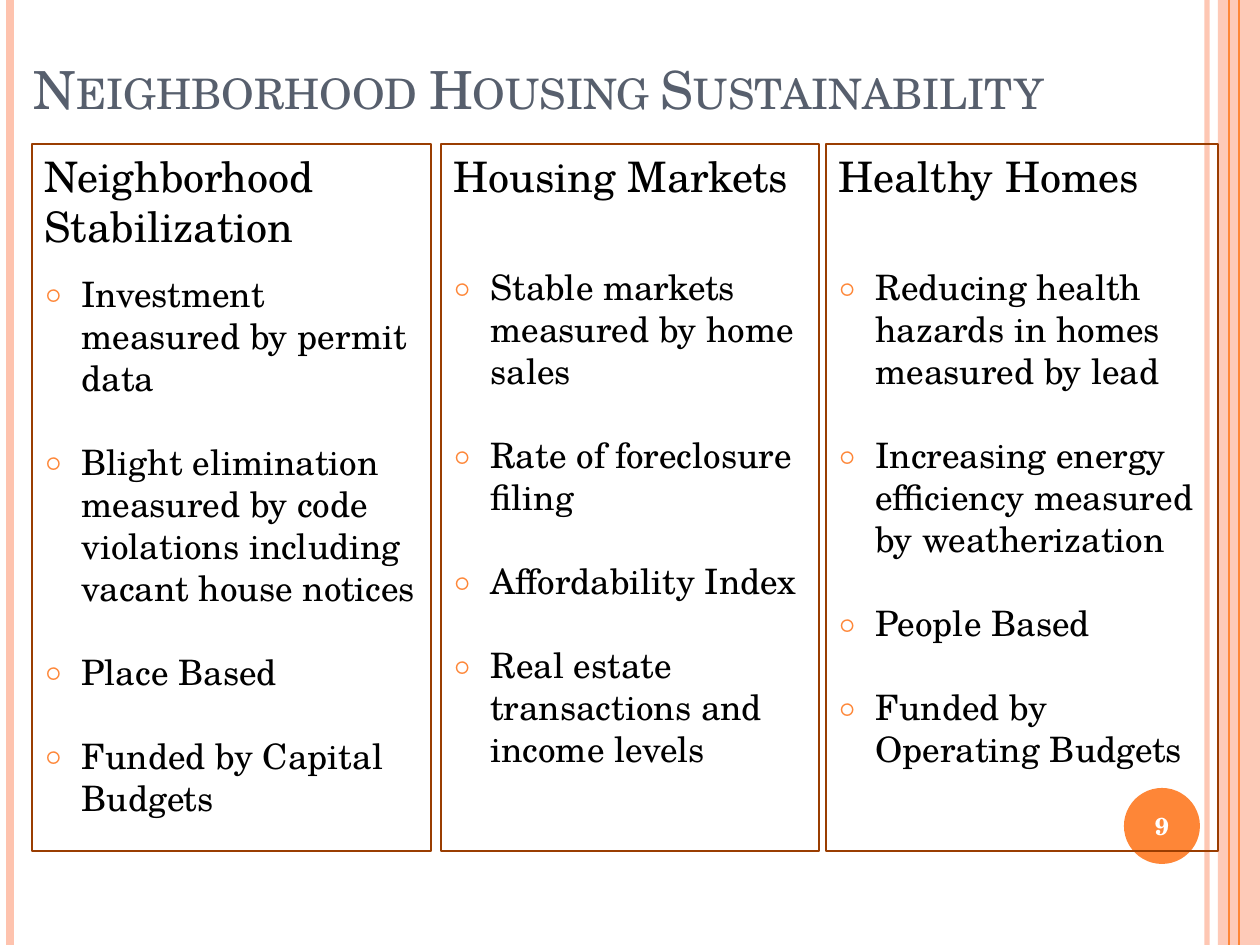
from lxml import etree
from pptx import Presentation
from pptx.dml.color import RGBColor
from pptx.enum.shapes import MSO_CONNECTOR, MSO_SHAPE
from pptx.enum.text import MSO_ANCHOR, MSO_AUTO_SIZE, PP_ALIGN
from pptx.oxml.ns import qn
from pptx.util import Emu, Pt

LINE = MSO_CONNECTOR.STRAIGHT
RECT, OVAL = MSO_SHAPE.RECTANGLE, MSO_SHAPE.OVAL
TOP, MIDDLE, BOTTOM = MSO_ANCHOR.TOP, MSO_ANCHOR.MIDDLE, MSO_ANCHOR.BOTTOM
LEFT, CENTER = PP_ALIGN.LEFT, PP_ALIGN.CENTER
FIXED = MSO_AUTO_SIZE.NONE
FONT = "TeX Gyre Schola"
ORANGE, PINK, BROWN = "FE8637", "FEC3AE", "9A3D01"
WIDE, HIGH = 1260, 945

RULES = [
    (1207, PINK, 3, 93),
    (10, PINK, 4.5, 100),
    (1239, ORANGE, 1.5, 100),
    (1229, ORANGE, 0.75, 100),
]
COLUMNS = [
    (32, 399, 12, "Neighborhood Stabilization", [
        "Investment measured by permit data",
        "Blight elimination measured by code violations including vacant house notices",
        "Place Based",
        "Funded by Capital Budgets"]),
    (441, 378, 37, "Housing Markets", [
        "Stable markets measured by home sales",
        "Rate of foreclosure filing",
        "Affordability Index",
        "Real estate transactions and income levels"]),
    (826, 392, 37, "Healthy Homes", [
        "Reducing health hazards in homes measured by lead",
        "Increasing energy efficiency measured by weatherization",
        "People Based",
        "Funded by Operating Budgets"]),
]


def px(n):
    return Emu(round(n * 914400 / 126))


def rgb(code):
    return RGBColor.from_string(code)


def place(shape, box):
    shape.left, shape.top, shape.width, shape.height = map(px, box)


def fade(shape, alpha):
    for tint in shape._element.spPr.iter(qn("a:srgbClr")):
        etree.SubElement(tint, qn("a:alpha"), val=str(alpha * 1000))


def style(para, size, color, bold=False):
    for run in para.runs:
        font = run.font
        font.name, font.size, font.bold = FONT, Pt(size), bold
        font.color.rgb = rgb(color)


def set_frame(frame, anchor):
    frame.word_wrap = True
    frame.auto_size = FIXED
    frame.vertical_anchor = anchor


def set_bullet(para):
    props = para._p.get_or_add_pPr()
    props.set("marL", str(px(37)))
    props.set("indent", str(-px(37)))
    tint = etree.SubElement(props, qn("a:buClr"))
    etree.SubElement(tint, qn("a:srgbClr"), val=ORANGE)
    etree.SubElement(props, qn("a:buSzPct"), val="70000")
    etree.SubElement(props, qn("a:buFont"), typeface=FONT)
    etree.SubElement(props, qn("a:buChar"), char="○")


def clear_bullet(para):
    props = para._p.get_or_add_pPr()
    props.set("marL", "0")
    props.set("indent", "0")
    etree.SubElement(props, qn("a:buNone"))


def add_plain(slide, kind, box, color):
    shape = slide.shapes.add_shape(kind, *map(px, box))
    shape.shadow.inherit = False
    shape.fill.solid()
    shape.fill.fore_color.rgb = rgb(color)
    shape.line.fill.background()
    return shape


def add_rule(slide, x, color, width, alpha):
    rule = slide.shapes.add_connector(LINE, px(x), 0, px(x), px(HIGH))
    rule.line.color.rgb = rgb(color)
    rule.line.width = Pt(width)
    if alpha < 100:
        fade(rule, alpha)
    etree.SubElement(rule._element.spPr, qn("a:effectLst"))


def add_trim(slide):
    band = add_plain(slide, RECT, (1218, 0, 42, HIGH), PINK)
    fade(band, 87)
    for rule in RULES:
        add_rule(slide, *rule)


def add_badge(slide, box, label):
    x, y, w, h = box
    add_plain(slide, OVAL, box, ORANGE)
    text = slide.shapes.add_textbox(*map(px, (x - 4, y + 2, w + 8, h - 4)))
    frame = text.text_frame
    set_frame(frame, MIDDLE)
    frame.text = label
    para = frame.paragraphs[0]
    para.alignment = CENTER
    style(para, 14, "FFFFFF", True)


def fill_title(title, box, words):
    place(title, box)
    frame = title.text_frame
    set_frame(frame, BOTTOM)
    frame.text = words
    para = frame.paragraphs[0]
    para.alignment = LEFT
    style(para, 30, "575F6D")
    para.runs[0].font._element.set("cap", "small")


def fill_column(shape, box, lead, head, items):
    place(shape, box)
    shape.line.color.rgb = rgb(BROWN)
    shape.line.width = Pt(0.75)
    frame = shape.text_frame
    set_frame(frame, TOP)
    frame.text = "\n".join([head] + items)
    first, *rest = frame.paragraphs
    first.space_before = Pt(6)
    clear_bullet(first)
    style(first, 24, "000000")
    for i, para in enumerate(rest):
        para.space_before = Pt(12 if i else lead)
        para.space_after = Pt(12)
        set_bullet(para)
        style(para, 20, "000000")


def main():
    deck = Presentation()
    deck.slide_width, deck.slide_height = px(WIDE), px(HIGH)
    slide = deck.slides.add_slide(deck.slide_layouts[1])
    add_trim(slide)
    add_badge(slide, (1124, 788, 76, 76), "9")
    fill_title(slide.shapes.title, (21, 21, 1134, 105),
               "Neighborhood Housing Sustainability")
    body = slide.placeholders[1]
    for x, w, lead, head, items in COLUMNS:
        box = (x, 144, w, 707)
        shape = body or slide.shapes.add_textbox(*map(px, box))
        fill_column(shape, box, lead, head, items)
        body = None
    deck.save("out.pptx")


if __name__ == "__main__":
    main()
